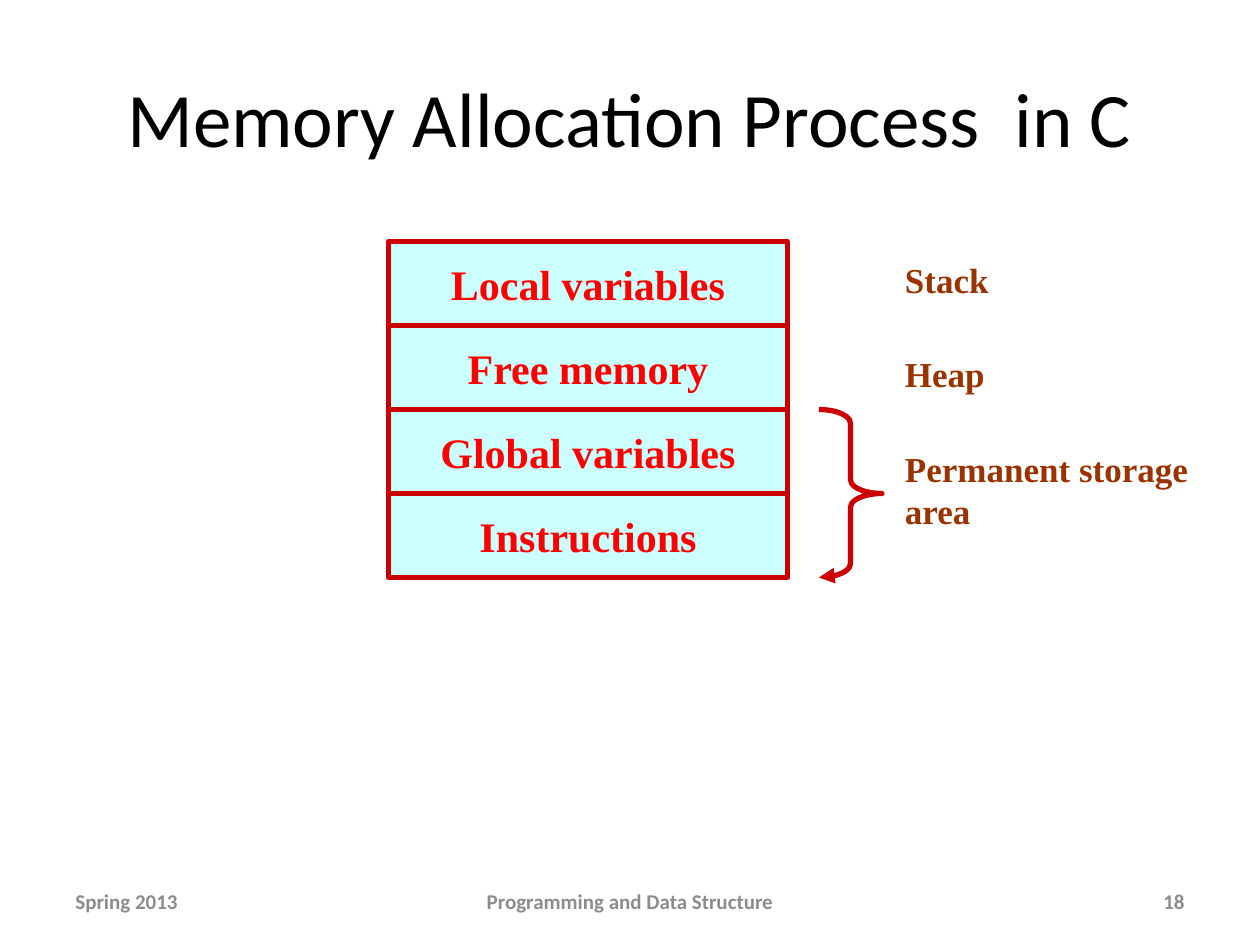
from lxml import etree
from pptx import Presentation
from pptx.dml.color import RGBColor
from pptx.enum.shapes import MSO_SHAPE
from pptx.enum.text import MSO_ANCHOR, PP_ALIGN
from pptx.oxml.ns import qn
from pptx.util import Pt

RECTANGLE, RIGHT_BRACE = MSO_SHAPE.RECTANGLE, MSO_SHAPE.RIGHT_BRACE
TOP, MIDDLE = MSO_ANCHOR.TOP, MSO_ANCHOR.MIDDLE
LEFT, CENTER, RIGHT = PP_ALIGN.LEFT, PP_ALIGN.CENTER, PP_ALIGN.RIGHT

COLORS = {
    "title": "000000",
    "footer": "8C8C8C",
    "segment": "CCFFFF",
    "outline": "CC0000",
    "segment_text": "FF0000",
    "label": "993300",
}
FORMATS = {
    "title": {"size": Pt(44), "name": "Calibri", "bold": False},
    "footer": {"size": Pt(12), "name": "Calibri", "bold": True},
    "segment_text": {"size": Pt(24), "name": "Times New Roman", "bold": True},
    "label": {"size": Pt(20), "name": "Times New Roman", "bold": True},
}
SEGMENTS = ["Local variables", "Free memory", "Global variables", "Instructions"]
LABELS = [("Stack", 6, 31), ("Heap", 60, 31), ("Permanent storage area", 114, 55)]
FOOTERS = [
    ("Spring 2013", 0, 168, LEFT),
    ("Programming and Data Structure", 210, 228, CENTER),
    ("18", 480, 168, RIGHT),
]


def rgb(role):
    """Return the colour of a role."""
    return RGBColor.from_string(COLORS[role])


def write(holder, text, role, align, anchor, wrap=True):
    """Fill a shape with one formatted paragraph."""
    frame = holder.text_frame
    frame.word_wrap = wrap
    frame.vertical_anchor = anchor
    paragraph = frame.paragraphs[0]
    paragraph.alignment = align
    run = paragraph.add_run()
    run.text = text
    for attribute, value in FORMATS[role].items():
        setattr(run.font, attribute, value)
    run.font.color.rgb = rgb(role)


def add_outlined(slide, preset, box):
    """Add a preset shape with the red outline and no shadow."""
    outlined = slide.shapes.add_shape(preset, *map(Pt, box))
    outlined.shadow.inherit = False
    outlined.line.color.rgb = rgb("outline")
    outlined.line.width = Pt(3)
    return outlined


def add_title(slide, left, top, width, height):
    """Place the slide title in its placeholder."""
    title = slide.shapes.title
    box = {"left": left, "top": top, "width": width, "height": height}
    for attribute, value in box.items():
        setattr(title, attribute, Pt(value))
    write(title, "Memory Allocation Process  in C", "title", CENTER, MIDDLE)


def add_memory_stack(slide, left, top, width, height):
    """Stack the memory segments in equal rows."""
    row_height = height / len(SEGMENTS)
    for row, name in enumerate(SEGMENTS):
        box = (left, top + row * row_height, width, row_height)
        segment = add_outlined(slide, RECTANGLE, box)
        segment.fill.solid()
        segment.fill.fore_color.rgb = rgb("segment")
        write(segment, name, "segment_text", CENTER, MIDDLE, wrap=False)


def add_brace(slide, left, top, width, height):
    """Draw the brace that joins the permanent segments."""
    brace = add_outlined(slide, RIGHT_BRACE, (left, top, width, height))
    brace.fill.background()
    brace.adjustments[0] = 0.22
    brace.adjustments[1] = 0.5
    outline = brace.line._get_or_add_ln()
    etree.SubElement(outline, qn("a:tailEnd"), type="triangle")


def add_labels(slide, left, top, width):
    """Name the storage area beside each part of the stack."""
    for text, offset, height in LABELS:
        label = slide.shapes.add_textbox(*map(Pt, (left, top + offset, width, height)))
        write(label, text, "label", LEFT, TOP)


def add_footer(slide, left, top, height):
    """Place the term, course and page number."""
    for text, offset, width, align in FOOTERS:
        footer = slide.shapes.add_textbox(*map(Pt, (left + offset, top, width, height)))
        write(footer, text, "footer", align, MIDDLE)


def main():
    """Build and save the slide."""
    presentation = Presentation()
    presentation.slide_width, presentation.slide_height = Pt(720), Pt(540)
    slide = presentation.slides.add_slide(presentation.slide_layouts[5])
    add_title(slide, 36, 21.6, 648, 90)
    add_footer(slide, 36, 500.5, 28.75)
    add_memory_stack(slide, 222, 138, 228, 192)
    add_brace(slide, 468, 234, 36, 96)
    add_labels(slide, 510, 138, 192)
    presentation.save("out.pptx")


if __name__ == "__main__":
    main()
